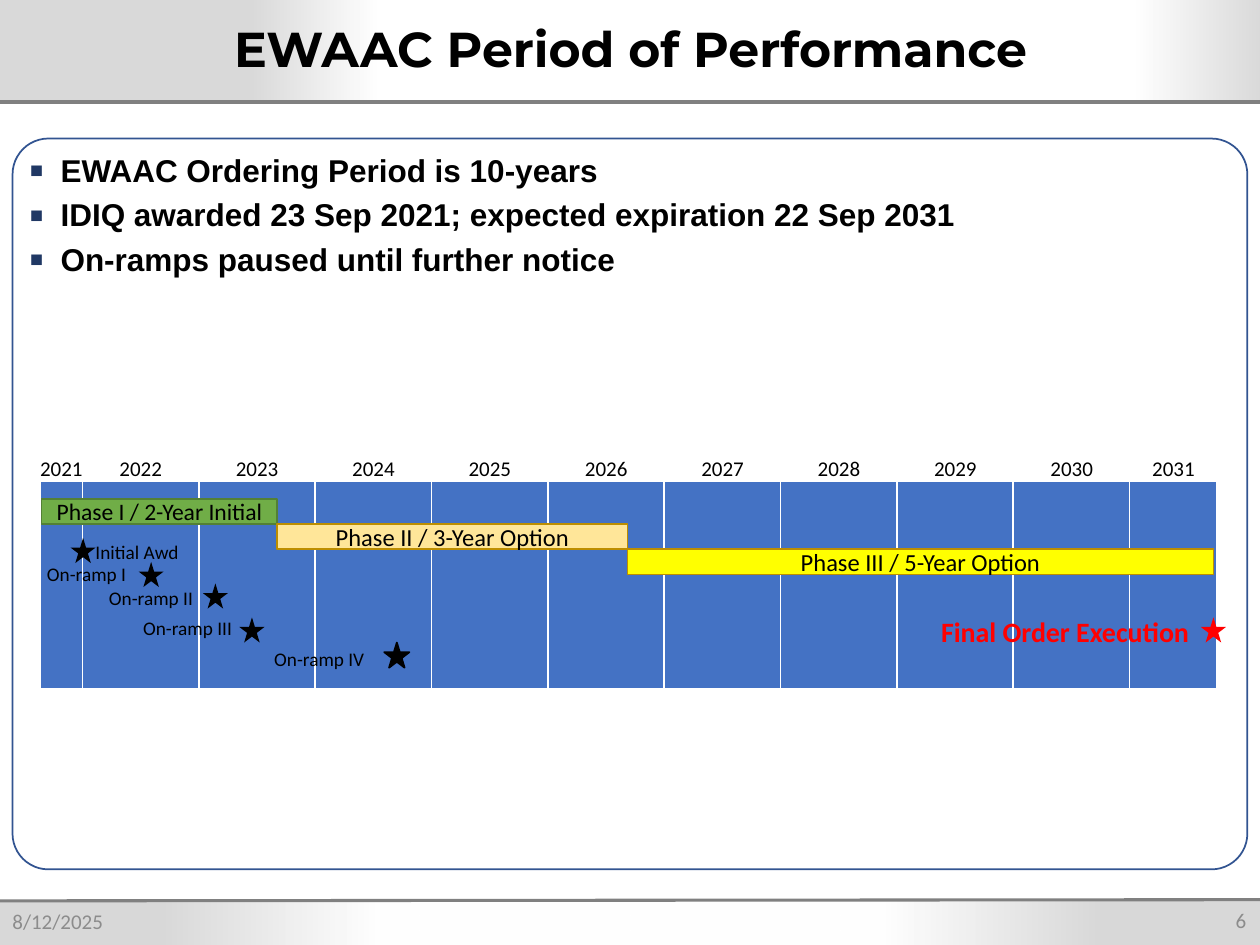
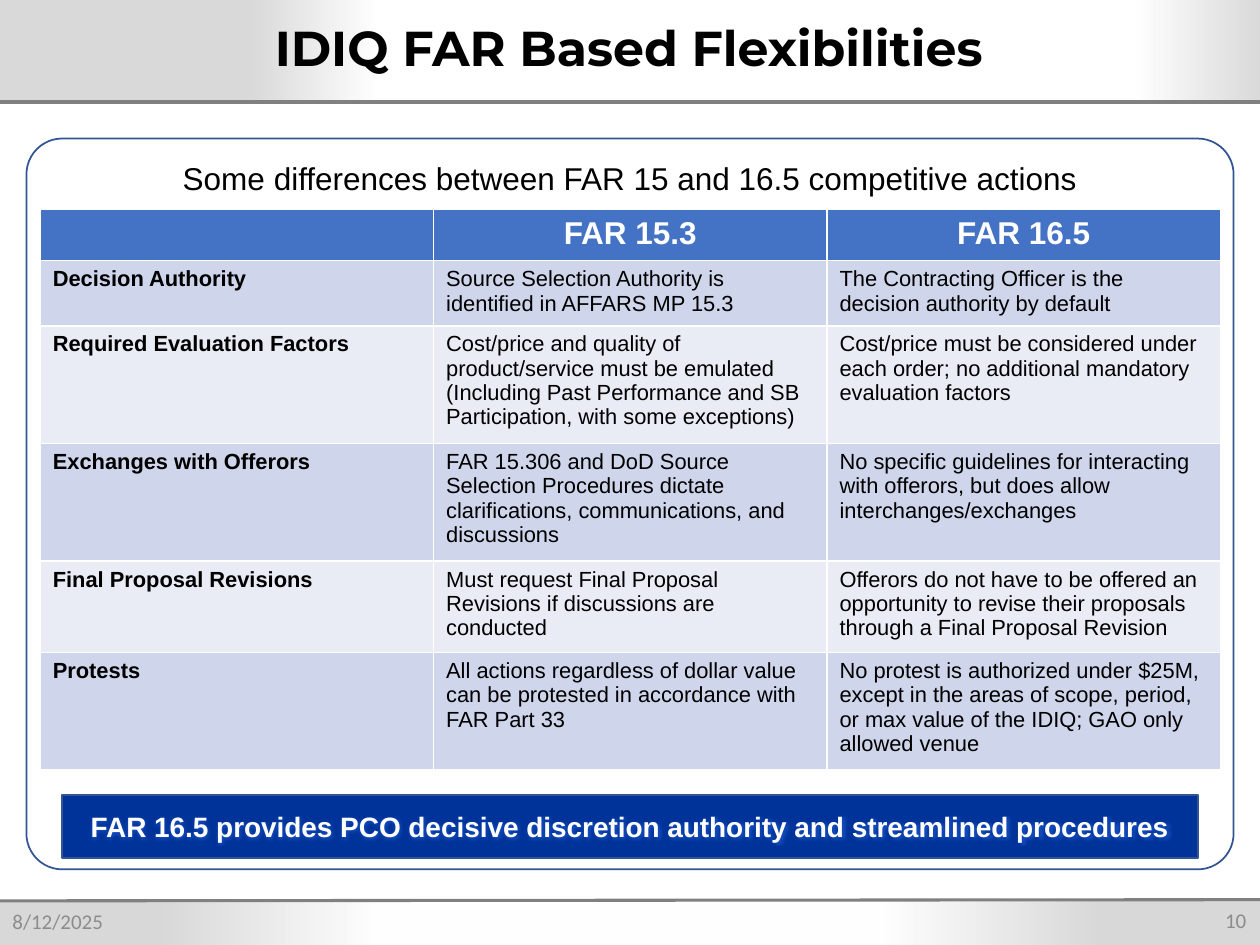
"""Builds two slides on the EWAAC ordering period and its FAR flexibilities."""
from lxml.etree import SubElement
from pptx import Presentation
from pptx.dml.color import RGBColor
from pptx.enum.shapes import MSO_CONNECTOR, MSO_SHAPE as SHAPE
from pptx.enum.text import MSO_ANCHOR as ANCHOR, MSO_AUTO_SIZE, PP_ALIGN as ALIGN
from pptx.oxml import parse_xml
from pptx.oxml.ns import nsdecls, qn
from pptx.util import Pt

BLACK = RGBColor(0x00, 0x00, 0x00)
WHITE = RGBColor(0xFF, 0xFF, 0xFF)
RED = RGBColor(0xFF, 0x00, 0x00)
GREY = RGBColor(0x80, 0x80, 0x80)
FOOTER_GREY = RGBColor(0x8C, 0x8C, 0x8C)
BAND_GREY = RGBColor(0xD9, 0xD9, 0xD9)
OUTLINE_BLUE = RGBColor(0x32, 0x54, 0x91)
TABLE_BLUE = RGBColor(0x44, 0x72, 0xC4)
ROW_TINTS = [RGBColor(0xCF, 0xD5, 0xEA), RGBColor(0xE9, 0xEB, 0xF5)]
BULLET_NAVY = RGBColor(0x20, 0x38, 0x64)
BANNER_BLUE = RGBColor(0x00, 0x33, 0x99)
GREEN = RGBColor(0x70, 0xAD, 0x47)
DARK_GREEN = RGBColor(0x53, 0x80, 0x35)
SAND = RGBColor(0xFF, 0xE6, 0x99)
YELLOW = RGBColor(0xFF, 0xFF, 0x00)
GOLD = RGBColor(0xBD, 0x8E, 0x00)


def write(holder, text, size=12, font="Calibri", color=BLACK, bold=False,
          align=ALIGN.LEFT, anchor=None, inset=None, spacing=None, after=None):
    """Fill the holder's text frame, one paragraph for each line, and format it."""
    frame = holder.text_frame
    frame.text = text
    if anchor is not None:
        frame.vertical_anchor = anchor
    if inset is not None:
        frame.margin_left = frame.margin_right = Pt(inset)
        frame.margin_top = frame.margin_bottom = Pt(inset)
    for paragraph in frame.paragraphs:
        paragraph.alignment = align
        paragraph.space_before = Pt(0)
        if spacing is not None:
            paragraph.line_spacing = spacing
        if after is not None:
            paragraph.space_after = Pt(after)
        for run in paragraph.runs:
            run.font.size, run.font.name, run.font.bold = Pt(size), font, bold
            run.font.color.rgb = color


def place(slide, at, kind=None, fill=None, line=None):
    """Add a preset shape, or a wrapping text box when no kind is given."""
    box = [Pt(length) for length in at]
    if kind is None:
        item = slide.shapes.add_textbox(*box)
    else:
        item = slide.shapes.add_shape(kind, *box)
        item.shadow.inherit = False
        if fill is not None:
            item.fill.solid()
            item.fill.fore_color.rgb = fill
        if line is None:
            item.line.fill.background()
        else:
            item.line.color.rgb = line
            item.line.width = Pt(1)
    item.text_frame.word_wrap = True
    return item


prs = Presentation()
prs.slide_width, prs.slide_height = Pt(720), Pt(540)

SLIDES = [
    (1, "EWAAC Period of Performance", (87.8, 11.5, 545, 33.1), "6", 7.2),
    (5, "IDIQ FAR Based Flexibilities", (8.6, 10.8, 701.3, 33.1), "10", 15.1),
]
for layout, heading, heading_at, page, panel_left in SLIDES:
    slide = prs.slides.add_slide(prs.slide_layouts[layout])
    title = slide.shapes.title
    title.left, title.top, title.width, title.height = map(Pt, heading_at)
    write(title, heading, size=28, font="Montserrat", bold=True, align=ALIGN.CENTER,
          anchor=ANCHOR.BOTTOM, inset=0, spacing=0.9)
    title.text_frame.auto_size = MSO_AUTO_SIZE.NONE
    write(place(slide, (0, 515.5, 162, 21.6)), "8/12/2025", color=FOOTER_GREY,
          anchor=ANCHOR.MIDDLE)
    write(place(slide, (557.3, 514.8, 162, 21.6)), page, color=FOOTER_GREY,
          align=ALIGN.RIGHT, anchor=ANCHOR.MIDDLE)
    panel = place(slide, (panel_left, 79.2, 720 - 2 * panel_left, 417.6),
                  SHAPE.ROUNDED_RECTANGLE, WHITE, OUTLINE_BLUE)
    panel.adjustments[0] = 0.049
timeline, flexibilities = prs.slides

master_parts = []
for top, height, stops in [(514.8, 25.2, (13, 30, 70, 87)), (0, 57.6, (20, 30, 90, 100))]:
    band = place(timeline, (0, top, 720, height), SHAPE.RECTANGLE)
    band.fill.gradient()
    band.fill.gradient_angle = 0
    stop_list = band.element.find(".//" + qn("a:gsLst"))
    for old_stop in list(stop_list):
        stop_list.remove(old_stop)
    for position, tint in zip(stops, (BAND_GREY, WHITE, WHITE, BAND_GREY)):
        stop = SubElement(stop_list, qn("a:gs"), pos=str(position * 1000))
        stop_color = SubElement(stop, qn("a:srgbClr"), val=str(tint))
        if tint == WHITE:
            SubElement(stop_color, qn("a:alpha"), val="90000")
    master_parts.append(band.element)
for start, end in [(58.3, 58.3), (514.8, 514.1)]:
    rule = timeline.shapes.add_connector(
        MSO_CONNECTOR.STRAIGHT, Pt(0), Pt(start), Pt(720), Pt(end))
    rule.line.color.rgb = GREY
    rule.line.width = Pt(1.75)
    SubElement(rule.element.spPr, qn("a:effectLst"))
    master_parts.append(rule.element)
for order, part in enumerate(master_parts):
    part.find(".//" + qn("p:cNvPr")).set("id", str(100 + order))
    prs.slide_master.shapes.element.insert(2 + order, part)

facts = timeline.placeholders[1]
facts.left, facts.top, facts.width, facts.height = Pt(9.4), Pt(85), Pt(707), Pt(388.1)
timeline.shapes.element.append(facts.element)
write(facts, "EWAAC Ordering Period is 10-years\n"
             "IDIQ awarded 23 Sep 2021; expected expiration 22 Sep 2031\n"
             "On-ramps paused until further notice",
      size=18, font="Arial", bold=True, spacing=0.9, after=6)
facts.text_frame.auto_size = MSO_AUTO_SIZE.NONE
for fact in facts.text_frame.paragraphs:
    properties = fact._p.get_or_add_pPr()
    properties.set("marL", str(Pt(18)))
    properties.set("indent", str(Pt(-18)))
    bullet_color = SubElement(properties, qn("a:buClr"))
    SubElement(bullet_color, qn("a:srgbClr"), val=str(BULLET_NAVY))
    SubElement(properties, qn("a:buSzPct"), val="135000")
    SubElement(properties, qn("a:buFont"), typeface="Arial")
    SubElement(properties, qn("a:buChar"), char="▪")

year_widths = [24.2] + [66.5] * 9 + [49.7]
years = timeline.shapes.add_table(
    1, len(year_widths), Pt(23), Pt(275), Pt(sum(year_widths)), Pt(118.8)).table
year_left = 23
for index, width in enumerate(year_widths):
    years.columns[index].width = Pt(width)
    years.cell(0, index).fill.solid()
    years.cell(0, index).fill.fore_color.rgb = TABLE_BLUE
    write(place(timeline, (year_left + width / 2 - 28, 257, 56, 21.6)),
          str(2021 + index), align=ALIGN.CENTER)
    year_left += width

PHASES = [
    ("Phase I / 2-Year Initial", 23.8, 158.4, GREEN, DARK_GREEN, 13.5),
    ("Phase II / 3-Year Option", 158.4, 358.6, SAND, GOLD, 14),
    ("Phase III / 5-Year Option", 358.6, 693.4, YELLOW, GOLD, 14),
]
for step, (name, start, end, fill, outline, size) in enumerate(PHASES):
    phase = place(timeline, (start, 285.1 + 14.4 * step, end - start, 14.4),
                  SHAPE.RECTANGLE, fill, outline)
    write(phase, name, size=size, align=ALIGN.CENTER, anchor=ANCHOR.MIDDLE, inset=0)

ON_RAMP = dict(size=11, align=ALIGN.RIGHT)
MILESTONES = [
    ("Initial Awd", (40.3, 307.4), (47.5, 305.3, 72, 20.9), None, dict(size=11)),
    ("On-ramp I", (79.2, 321.1), (7.2, 317.5, 72, 20.9), None, ON_RAMP),
    ("On-ramp II", (115.9, 333.4), (45.4, 331.2, 72, 20.9), None, ON_RAMP),
    ("On-ramp III", (136.8, 352.8), (67.7, 348.5, 72, 20.9), None, ON_RAMP),
    ("On-ramp IV", (219.6, 367.2), (143.3, 366.5, 72, 20.9), BLACK, ON_RAMP),
    ("Final Order Execution", (686.2, 352.8), (523.4, 347.8, 170.6, 26.6), None,
     dict(size=16, color=RED, bold=True, align=ALIGN.CENTER)),
]
for name, star_at, label_at, outline, style in MILESTONES:
    place(timeline, (*star_at, 14.4, 14.4), SHAPE.STAR_5_POINT,
          style.get("color", BLACK), outline)
    write(place(timeline, label_at), name, **style)

COMPARISON = [
    (29.5, "", "FAR 15.3", "FAR 16.5"),
    (35, "Decision Authority",
     "Source Selection Authority is identified in AFFARS MP 15.3",
     "The Contracting Officer is the decision authority by default"),
    (62.5, "Required Evaluation Factors",
     "Cost/price and quality of\nproduct/service must be emulated\n"
     "(Including Past Performance and SB\nParticipation, with some exceptions)",
     "Cost/price must be considered under\neach order; no additional mandatory\n"
     "evaluation factors"),
    (62.5, "Exchanges with Offerors",
     "FAR 15.306 and DoD Source\nSelection Procedures dictate\n"
     "clarifications, communications, and\ndiscussions",
     "No specific guidelines for interacting\nwith offerors, but does allow\n"
     "interchanges/exchanges"),
    (48.5, "Final Proposal Revisions",
     "Must request Final Proposal Revisions if discussions are conducted",
     "Offerors do not have to be offered an\nopportunity to revise their proposals\n"
     "through a Final Proposal Revision"),
    (62.5, "Protests",
     "All actions regardless of dollar value\ncan be protested in accordance with\n"
     "FAR Part 33",
     "No protest is authorized under $25M,\nexcept in the areas of scope, period,\n"
     "or max value of the IDIQ; GAO only\nallowed venue"),
]
comparison = flexibilities.shapes.add_table(
    len(COMPARISON), 3, Pt(23), Pt(119.5), Pt(674.4), Pt(300)).table
for row, (height, *entries) in enumerate(COMPARISON):
    comparison.rows[row].height = Pt(height)
    for column, entry in enumerate(entries):
        cell = comparison.cell(row, column)
        cell.fill.solid()
        if row == 0:
            cell.fill.fore_color.rgb = TABLE_BLUE
            write(cell, entry, size=18, font="Arial", color=WHITE, bold=True,
                  align=ALIGN.CENTER)
        else:
            cell.fill.fore_color.rgb = ROW_TINTS[(row - 1) % 2]
            write(cell, entry, size=12.5, font="Arial", bold=column == 0)

write(place(flexibilities, (55.4, 87.1, 609.1, 28.8)),
      "Some differences between FAR 15 and 16.5 competitive actions",
      size=18, font="Arial", align=ALIGN.CENTER)

banner = place(flexibilities, (35.3, 454.3, 649.4, 36), SHAPE.RECTANGLE,
               BANNER_BLUE, OUTLINE_BLUE)
write(banner, "FAR 16.5 provides PCO decisive discretion authority and streamlined procedures",
      size=16, font="Arial", color=WHITE, bold=True, align=ALIGN.CENTER,
      anchor=ANCHOR.MIDDLE, after=6)
glow = parse_xml(
    f'<a:effectLst {nsdecls("a")}><a:glow rad="63500"><a:srgbClr val="3D7BFF">'
    '<a:alpha val="40000"/></a:srgbClr></a:glow></a:effectLst>')
banner.element.find(".//" + qn("a:rPr")).find(qn("a:solidFill")).addnext(glow)

prs.save("out.pptx")
